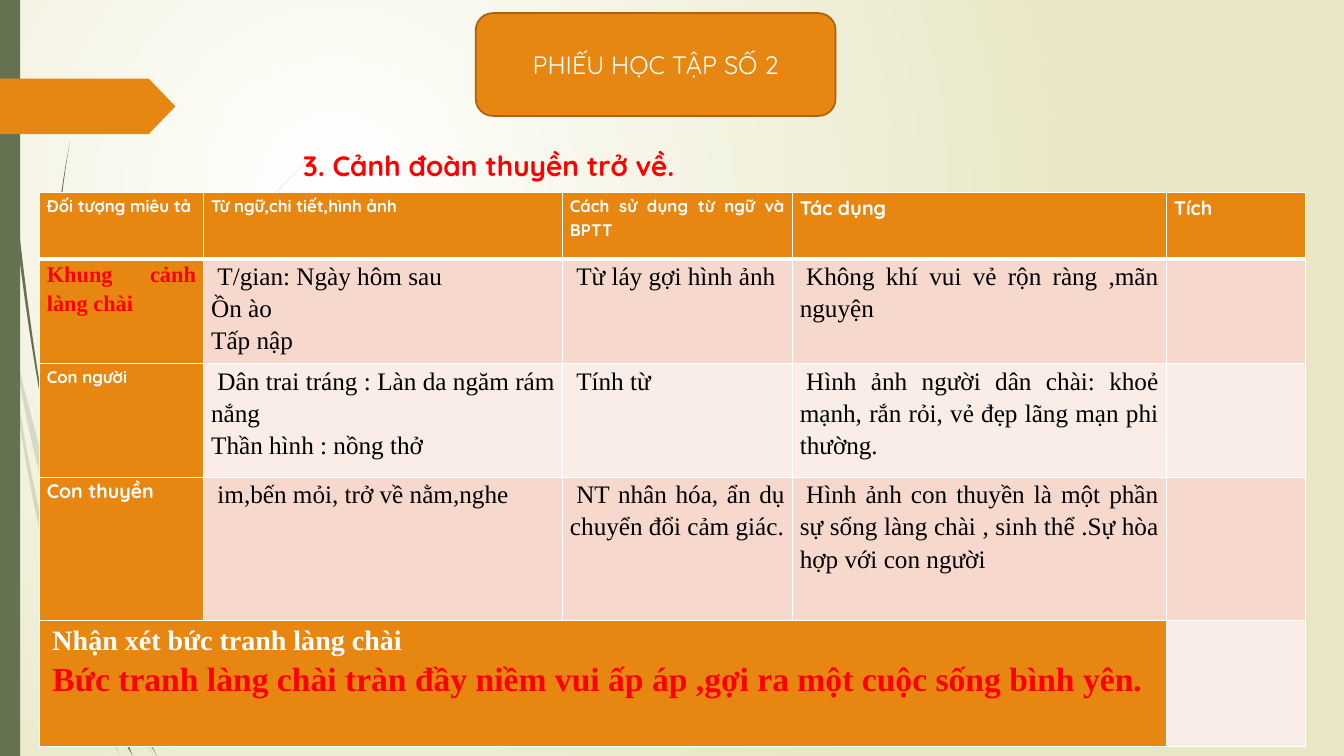
from dataclasses import dataclass
from math import hypot, pi, sin

from lxml.etree import SubElement
from pptx import Presentation
from pptx.dml.color import RGBColor
from pptx.enum.shapes import MSO_SHAPE as Shape
from pptx.enum.text import MSO_ANCHOR as Anchor, MSO_AUTO_SIZE as AutoSize, PP_ALIGN as Align
from pptx.oxml import parse_xml
from pptx.oxml.ns import nsdecls, qn
from pptx.util import Pt

Point = tuple[float, float]

COLORS = {
    "white": "FFFFFF", "sand": "E8E6C4", "moss": "647252", "orange": "E78712",
    "rust": "AB640D", "red": "FF0000", "black": "000000",
    "peach": "F6D9CC", "blush": "FAEDE7",
}
SANS, SERIF = "Quicksand", "Times New Roman"
SLIDE_WIDTH, SLIDE_HEIGHT = 960, 540
COLUMN_WIDTHS = (117.36, 256.32, 164.16, 267.12, 99.36)
ROW_HEIGHTS = (47.52, 73.44, 81.36, 102.24, 90)
CURVE_STEPS = 16


@dataclass(frozen=True)
class Line:
    text: str
    size: float = 18
    font: str = SERIF
    color: str = "black"
    bold: bool = False
    indent: float = 0
    align: Align = Align.JUSTIFY
    spacing: float = 1.15


@dataclass(frozen=True)
class Wisp:
    """A grass blade: a curve through three points, widest in the middle."""
    root: Point
    middle: Point
    tip: Point
    width: float


def label(text: str, size: float = 12, **changes) -> Line:
    """White bold heading of a column or row."""
    return Line(text, size, **{"font": SANS, "color": "white", "bold": True, **changes})


def opening(text: str) -> Line:
    """First body paragraph of a cell, slightly indented."""
    return Line(text, indent=4.5)


PALE_WISPS = (
    Wisp((0, 209), (4, 230), (8, 252), 4),
    Wisp((8, 252), (33, 392), (73, 514), 3),
    Wisp((10, 248), (32, 342), (61, 431), 5),
    Wisp((63, 429), (85, 490), (110, 540), 3),
    Wisp((60, 431), (67, 492), (86, 540), 4),
    Wisp((61, 422), (115, 251), (225, 110), 1.5),
)
DARK_WISPS = (
    Wisp((2.5, 0), (13, 168), (41, 346), 2),
    Wisp((41, 343), (56, 432), (84, 520), 3),
    Wisp((43, 340), (58, 396), (76, 464), 2),
    Wisp((79, 461), (88, 490), (112, 540), 3),
    Wisp((76, 464), (83, 508), (95, 540), 3),
    Wisp((43, 340), (38, 216), (50, 101), 1.5),
    Wisp((79, 460), (113, 342), (187, 248), 1.5),
)

WORKSHEET = (
    ((label("Đối tượng miêu tả"),), (label("Từ ngữ,chi tiết,hình ảnh"),),
     (label("Cách sử dụng từ ngữ và BPTT"),), (label("Tác dụng", 14),), (label("Tích", 14),)),
    ((label("Khung cảnh làng chài", 16, font=SERIF, color="red"),),
     (opening("T/gian: Ngày hôm sau"), Line("Ồn ào"), Line("Tấp nập")),
     (opening("Từ láy gợi hình ảnh"),),
     (opening("Không khí vui vẻ rộn ràng ,mãn nguyện"),), ()),
    ((label("Con người"),),
     (opening("Dân trai tráng : Làn da ngăm rám nắng"), Line("Thần hình : nồng thở")),
     (opening("Tính từ"),),
     (opening("Hình ảnh người dân chài: khoẻ mạnh, rắn rỏi, vẻ đẹp lãng mạn phi thường."),), ()),
    ((label("Con thuyền", 14, align=Align.LEFT, spacing=1.07),),
     (opening("im,bến mỏi, trở về nằm,nghe"),),
     (opening("NT nhân hóa, ẩn dụ chuyển đổi cảm giác."),),
     (opening("Hình ảnh con thuyền là một phần sự sống làng chài , sinh thể .Sự hòa hợp "
              "với con người"),), ()),
    ((label("Nhận xét bức tranh làng chài", 20, font=SERIF, indent=4),
      label("Bức tranh làng chài tràn đầy niềm vui ấp áp ,gợi ra một cuộc sống bình yên.",
            24, font=SERIF, color="red", indent=4)), (), (), (), ()),
)


def rgb(name: str) -> RGBColor:
    return RGBColor.from_string(COLORS[name])


def paint(shape, color: str) -> None:
    shape.fill.solid()
    shape.fill.fore_color.rgb = rgb(color)
    shape.line.fill.background()
    shape.shadow.inherit = False


def write(frame, lines: tuple[Line, ...]) -> None:
    frame.word_wrap = True
    for index, line in enumerate(lines):
        paragraph = frame.add_paragraph() if index else frame.paragraphs[0]
        paragraph.text = line.text
        paragraph.alignment = line.align
        paragraph.line_spacing = line.spacing
        if line.indent:
            paragraph._p.get_or_add_pPr().set("indent", str(Pt(line.indent)))
        font = paragraph.runs[0].font
        font.size, font.name, font.bold = Pt(line.size), line.font, line.bold
        font.color.rgb = rgb(line.color)


def wisp_outline(wisp: Wisp) -> list[Point]:
    """Follow a quadratic curve and step sideways from it, down one edge and back up the other."""
    (x0, y0), (xm, ym), (x2, y2) = wisp.root, wisp.middle, wisp.tip
    x1, y1 = 2 * xm - (x0 + x2) / 2, 2 * ym - (y0 + y2) / 2
    left, right = [], []
    for step in range(CURVE_STEPS + 1):
        t = step / CURVE_STEPS
        s = 1 - t
        x = s * s * x0 + 2 * s * t * x1 + t * t * x2
        y = s * s * y0 + 2 * s * t * y1 + t * t * y2
        dx = s * (x1 - x0) + t * (x2 - x1)
        dy = s * (y1 - y0) + t * (y2 - y1)
        reach = wisp.width / 2 * sin(pi * t) / hypot(dx, dy)
        left.append((x - dy * reach, y + dx * reach))
        right.append((x + dy * reach, y - dx * reach))
    return left + right[::-1]


def draw_wisps(slide, wisps: tuple[Wisp, ...], opacity: int) -> None:
    group = slide.shapes.add_group_shape()
    for wisp in wisps:
        root, *edge = [(Pt(x), Pt(y)) for x, y in wisp_outline(wisp)]
        builder = group.shapes.build_freeform(*root)
        builder.add_line_segments(edge, close=True)
        blade = builder.convert_to_shape()
        paint(blade, "moss")
        if opacity < 100:
            color = blade.element.spPr.find(f"{qn('a:solidFill')}/{qn('a:srgbClr')}")
            SubElement(color, qn("a:alpha"), val=str(opacity * 1000))


def draw_background(slide) -> None:
    fill = slide.background.fill
    fill.gradient()
    for stop, color, position in zip(fill.gradient_stops, ("white", "sand"), (0, 1)):
        stop.color.rgb, stop.position = rgb(color), position
    gradient = slide.element.find(f".//{qn('a:gradFill')}")
    circle = parse_xml(f'<a:path {nsdecls("a")} path="circle">'
                       '<a:fillToRect l="50000" t="50000" r="100000" b="100000"/></a:path>')
    gradient.replace(gradient.find(qn("a:lin")), circle)


def draw_borders(cell, row: int) -> None:
    """White rules, thicker between the header and the body."""
    widths = {"L": 1, "R": 1, "T": 3 if row == 1 else 1, "B": 3 if row == 0 else 1}
    for index, (side, width) in enumerate(widths.items()):
        rule = parse_xml(f'<a:ln{side} {nsdecls("a")} w="{Pt(width)}"><a:solidFill>'
                         f'<a:srgbClr val="{COLORS["white"]}"/></a:solidFill></a:ln{side}>')
        cell._tc.get_or_add_tcPr().insert(index, rule)


def draw_worksheet(slide) -> None:
    table = slide.shapes.add_table(len(ROW_HEIGHTS), len(COLUMN_WIDTHS), Pt(28.08), Pt(137.52),
                                   Pt(sum(COLUMN_WIDTHS)), Pt(sum(ROW_HEIGHTS))).table
    for column, width in zip(table.columns, COLUMN_WIDTHS):
        column.width = Pt(width)
    for row, height in zip(table.rows, ROW_HEIGHTS):
        row.height = Pt(height)
    last = len(ROW_HEIGHTS) - 1
    table.cell(last, 0).merge(table.cell(last, 3))
    for r, entries in enumerate(WORKSHEET):
        for c, lines in enumerate(entries):
            cell = table.cell(r, c)
            heading = r == 0 or c == 0 or cell.is_spanned
            cell.fill.solid()
            cell.fill.fore_color.rgb = rgb("orange" if heading else "peach" if r % 2 else "blush")
            cell.margin_left = cell.margin_right = Pt(5.4)
            cell.margin_top = cell.margin_bottom = Pt(0)
            draw_borders(cell, r)
            write(cell.text_frame, lines)


def draw_block(slide, kind: Shape, left: float, top: float, width: float, height: float,
               color: str):
    block = slide.shapes.add_shape(kind, Pt(left), Pt(top), Pt(width), Pt(height))
    paint(block, color)
    return block


def main() -> None:
    deck = Presentation()
    deck.slide_width, deck.slide_height = Pt(SLIDE_WIDTH), Pt(SLIDE_HEIGHT)
    slide = deck.slides.add_slide(deck.slide_layouts[6])
    draw_background(slide)
    draw_wisps(slide, PALE_WISPS, opacity=20)
    draw_wisps(slide, DARK_WISPS, opacity=100)
    draw_block(slide, Shape.RECTANGLE, 0, 0, 14.4, SLIDE_HEIGHT, "moss")
    tag = draw_block(slide, Shape.PENTAGON, 0, 56.16, 125.28, 39.6, "orange")
    tag.adjustments[0] = 0.48

    banner = draw_block(slide, Shape.ROUNDED_RECTANGLE, 339.84, 9.36, 257.04, 73.44, "orange")
    banner.line.color.rgb, banner.line.width = rgb("rust"), Pt(1.25)
    banner.text_frame.vertical_anchor = Anchor.MIDDLE
    write(banner.text_frame, (label("PHIẾU HỌC TẬP SỐ 2", 18, bold=False,
                                    align=Align.CENTER, spacing=1.0),))

    heading = slide.shapes.add_textbox(Pt(209.52), Pt(102.24), Pt(300.96), Pt(31.68))
    write(heading.text_frame, (label("3. Cảnh đoàn thuyền trở về.", 20, color="red",
                                     align=Align.LEFT, spacing=1.0),))
    heading.text_frame.auto_size = AutoSize.SHAPE_TO_FIT_TEXT
    draw_worksheet(slide)
    deck.save("out.pptx")


if __name__ == "__main__":
    main()
